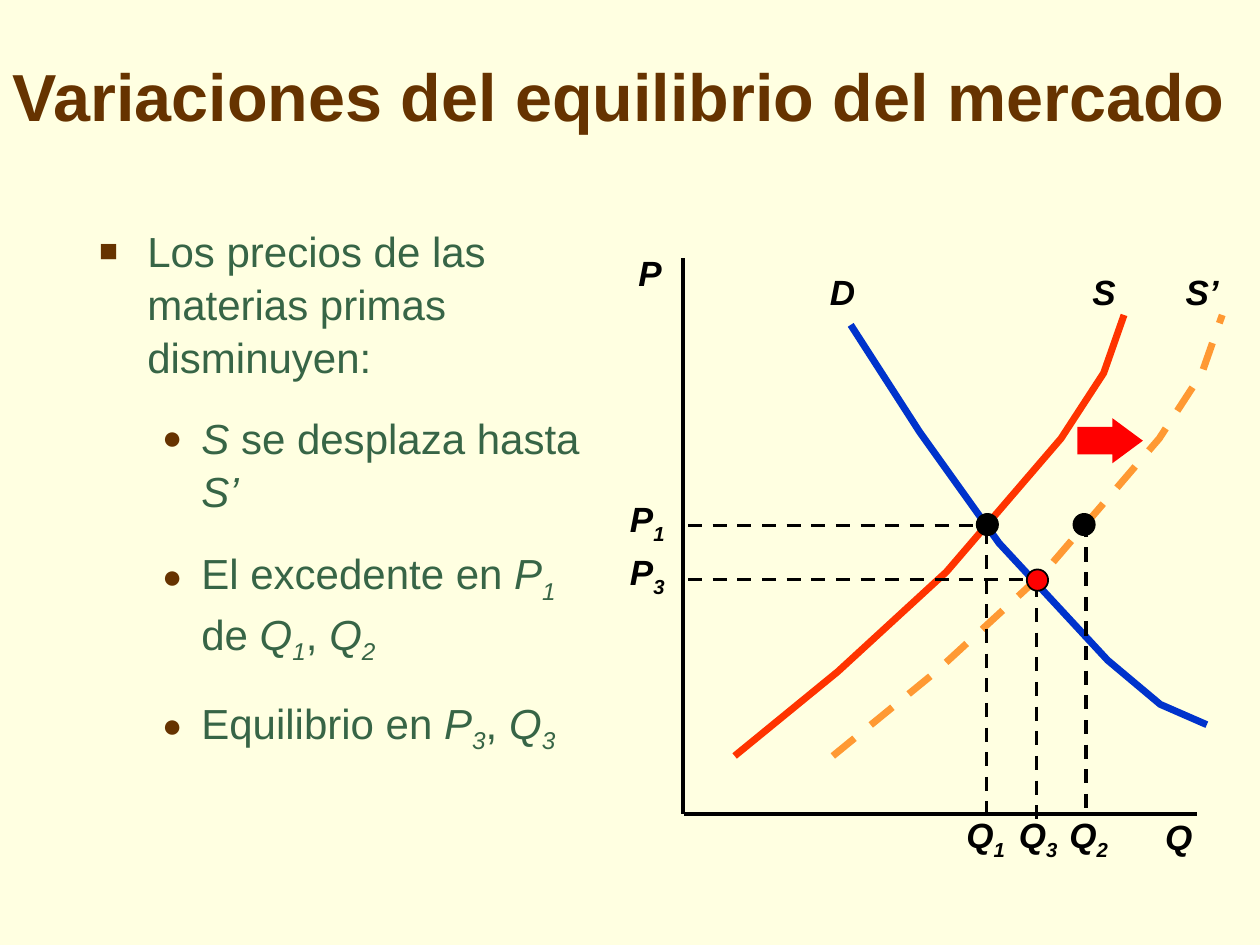
"""Build a slide on how a supply shift changes the market equilibrium."""
from lxml.etree import SubElement
from pptx import Presentation
from pptx.dml.color import RGBColor
from pptx.enum.dml import MSO_LINE
from pptx.enum.shapes import MSO_CONNECTOR, MSO_SHAPE
from pptx.enum.text import MSO_ANCHOR, PP_ALIGN
from pptx.oxml.ns import qn
from pptx.util import Cm, Pt

color = RGBColor.from_string


def write(paragraph, markup, size, hex_color, bold=False):
    """Add runs: text between bars is italic, and what follows _ is subscript."""
    for index, part in enumerate(markup.split("|")):
        for depth, piece in enumerate(part.split("_")):
            if not piece:
                continue
            run = paragraph.add_run()
            run.text = piece
            run.font.name = "Arial"
            run.font.size = Pt(size)
            run.font.bold = bold
            run.font.italic = index % 2 == 1
            run.font.color.rgb = color(hex_color)
            if depth:
                run.font._element.set("baseline", "-25000")


prs = Presentation()
prs.slide_width, prs.slide_height = Cm(25.4), Cm(19.05)
slide = prs.slides.add_slide(prs.slide_layouts[5])
slide.background.fill.solid()
slide.background.fill.fore_color.rgb = color("FFFFE1")
shapes = slide.shapes

title = shapes.title
title.left, title.top, title.width, title.height = Cm(0), Cm(0.84), Cm(25.4), Cm(2.01)
title.text_frame.vertical_anchor = MSO_ANCHOR.BOTTOM
heading = title.text_frame.paragraphs[0]
heading.alignment = PP_ALIGN.LEFT
write(heading, "Variaciones del equilibrio del mercado", 38, "663300", True)

points = [
    (0, "Los precios de las materias primas disminuyen:"),
    (1, "|S| se desplaza hasta |S’|"),
    (1, "El excedente en |P_1| de |Q_1|, |Q_2|"),
    (1, "Equilibrio en |P_3|, |Q_3|"),
]
bullet_styles = [("■", 75000, 0.97, 0.97), ("●", 80000, 2.06, 0.79)]
body = shapes.add_textbox(Cm(1.75), Cm(4.37), Cm(10.19), Cm(9.63)).text_frame
body.word_wrap = True
for number, (level, markup) in enumerate(points):
    point = body.add_paragraph() if number else body.paragraphs[0]
    point.level = level
    point.line_spacing = 1.05
    point.space_before = Pt(16.5 if number else 0)
    mark, percent, margin, hanging = bullet_styles[level]
    properties = point._p.get_or_add_pPr()
    properties.set("marL", str(Cm(margin)))
    properties.set("indent", str(-Cm(hanging)))
    bullet_color = SubElement(properties, qn("a:buClr"))
    SubElement(bullet_color, qn("a:srgbClr"), val="663300")
    SubElement(properties, qn("a:buSzPct"), val=str(percent))
    SubElement(properties, qn("a:buFont"), typeface="Arial")
    SubElement(properties, qn("a:buChar"), char=mark)
    write(point, markup, 24, "376546")

supply = [(14.81, 15.24), (16.89, 13.54), (19.08, 11.53),
          (21.39, 8.84), (22.25, 7.52), (22.66, 6.35)]
new_supply = [(x + 1.98, y) for x, y in supply]
demand = [(17.15, 6.55), (18.54, 8.71), (20.14, 10.95),
          (22.33, 13.31), (23.39, 14.2), (24.33, 14.61)]
curves = [
    (new_supply, "FF9933", MSO_LINE.DASH),
    (supply, "FF3300", MSO_LINE.SOLID),
    (demand, "0033CC", MSO_LINE.SOLID),
]
for vertices, hex_color, dash in curves:
    start, *rest = [(Cm(x), Cm(y)) for x, y in vertices]
    builder = shapes.build_freeform(*start)
    builder.add_line_segments(rest, close=False)
    curve = builder.convert_to_shape()
    curve.shadow.inherit = False
    curve.fill.background()
    curve.line.color.rgb = color(hex_color)
    curve.line.width = Pt(4)
    curve.line.dash_style = dash

shift = shapes.add_shape(MSO_SHAPE.RIGHT_ARROW, Cm(21.72), Cm(8.43), Cm(1.32), Cm(0.91))
shift.adjustments[0], shift.adjustments[1] = 0.61, 0.676
shift.shadow.inherit = False
shift.fill.solid()
shift.fill.fore_color.rgb = color("FF0000")
shift.line.fill.background()

straight_lines = [
    (13.77, 5.21, 13.77, 16.41, MSO_LINE.SOLID),
    (13.79, 16.41, 24.13, 16.41, MSO_LINE.SOLID),
    (13.87, 10.59, 19.91, 10.59, MSO_LINE.DASH),
    (19.89, 10.69, 19.89, 16.41, MSO_LINE.DASH),
    (13.87, 11.68, 20.85, 11.68, MSO_LINE.DASH),
    (20.9, 11.76, 20.9, 16.61, MSO_LINE.DASH),
    (21.89, 10.54, 21.89, 16.43, MSO_LINE.DASH),
]
for *ends, dash in straight_lines:
    guide = shapes.add_connector(MSO_CONNECTOR.STRAIGHT, *map(Cm, ends))
    guide.line.color.rgb = color("000000")
    guide.line.width = Pt(2)
    guide.line.dash_style = dash
    SubElement(guide._element.spPr, qn("a:effectLst"))

for x, y, hex_color in [(19.69, 10.36, "000000"), (21.64, 10.36, "000000"),
                        (20.7, 11.48, "FF0000")]:
    dot = shapes.add_shape(MSO_SHAPE.OVAL, Cm(x), Cm(y), Cm(0.43), Cm(0.43))
    dot.shadow.inherit = False
    dot.fill.solid()
    dot.fill.fore_color.rgb = color(hex_color)
    dot.line.color.rgb = color("000000")
    dot.line.width = Pt(1)

labels = [
    ("P", 12.62, 4.95, 0.97), ("Q", 23.24, 16.31, 1.04),
    ("D", 16.48, 5.33, 1.02), ("S", 21.77, 5.33, 0.97), ("S’", 23.65, 5.33, 1.17),
    ("P_1", 12.45, 9.91, 1.22), ("P_3", 12.45, 10.97, 1.22),
    ("Q_1", 19.23, 16.28, 1.3), ("Q_3", 20.29, 16.28, 1.3), ("Q_2", 21.31, 16.28, 1.3),
]
for symbol, x, y, width in labels:
    label = shapes.add_textbox(Cm(x), Cm(y), Cm(width), Cm(1.09)).text_frame
    label.word_wrap = False
    write(label.paragraphs[0], f"|{symbol}|", 20, "000000", True)

prs.save("out.pptx")
